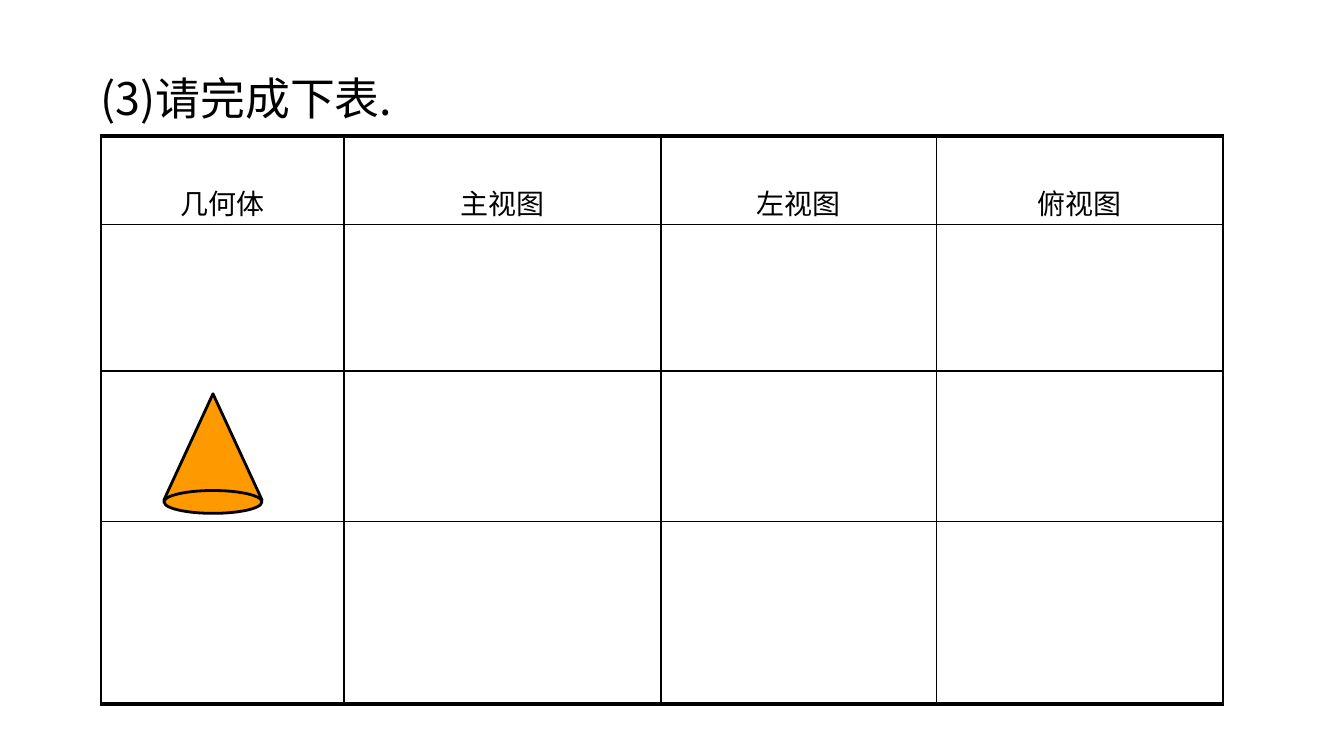
from lxml.etree import SubElement
from pptx import Presentation
from pptx.dml.color import RGBColor
from pptx.enum.shapes import MSO_SHAPE as Preset
from pptx.enum.text import MSO_ANCHOR as Anchor, PP_ALIGN as Align
from pptx.oxml.ns import qn
from pptx.util import Inches, Pt

BLACK, ORANGE = "000000", "FF9900"
CJK_FONT = "Noto Sans CJK SC"
TITLE = "(3)请完成下表."
HEADERS = ["几何体", "主视图", "左视图", "俯视图"]
COLUMNS = [1.81, 2.36, 2.05, 2.13]
ROWS = [0.66, 1.09, 1.12, 1.36]
TABLE_LEFT, TABLE_TOP = 0.75, 1.01
THIN, THICK = 1, 2.25
CONE = [
    (Preset.ISOSCELES_TRIANGLE, 2.93, 0.79),
    (Preset.OVAL, 3.65, 0.17),
]
CONE_LEFT, CONE_WIDTH = 1.22, 0.73


def color(value):
    return RGBColor.from_string(value)


def format_text(paragraph, size, font, spacing):
    paragraph.line_spacing = spacing
    for run in paragraph.runs:
        run.font.size = Pt(size)
        run.font.name = font
        run.font.color.rgb = color(BLACK)
        SubElement(run.font._element, qn("a:ea"), typeface=CJK_FONT)


def set_borders(cell, widths):
    properties = cell._tc.get_or_add_tcPr()
    for position, (side, width) in enumerate(widths.items()):
        line = SubElement(properties, qn(f"a:ln{side}"), w=str(Pt(width)))
        fill = SubElement(line, qn("a:solidFill"))
        SubElement(fill, qn("a:srgbClr"), val=BLACK)
        properties.insert(position, line)


presentation = Presentation()
presentation.slide_width = Inches(10)
presentation.slide_height = presentation.slide_width * 9 // 16
slide = presentation.slides.add_slide(presentation.slide_layouts[6])

title = slide.shapes.add_textbox(Inches(0.65), Inches(0.53), Inches(9.33), Inches(0.44))
frame = title.text_frame
frame.word_wrap = True
frame.vertical_anchor = Anchor.MIDDLE
frame.margin_top = frame.margin_bottom = 0
frame.text = TITLE
format_text(frame.paragraphs[0], 24, CJK_FONT, 0.9)

table = slide.shapes.add_table(
    len(ROWS), len(COLUMNS), Inches(TABLE_LEFT), Inches(TABLE_TOP),
    Inches(sum(COLUMNS)), Inches(sum(ROWS)),
).table
table.first_row = table.horz_banding = False
for column, width in zip(table.columns, COLUMNS):
    column.width = Inches(width)
for index, (row, height) in enumerate(zip(table.rows, ROWS)):
    row.height = Inches(height)
    top = THICK if index == 0 else THIN
    bottom = THICK if index == len(ROWS) - 1 else THIN
    for cell in row.cells:
        cell.fill.background()
        cell.margin_left = cell.margin_right = Inches(0.1)
        cell.margin_top = cell.margin_bottom = Inches(0.04)
        set_borders(cell, {"L": THIN, "R": THIN, "T": top, "B": bottom})
for cell, header in zip(table.rows[0].cells, HEADERS):
    cell.text = header
    paragraph = cell.text_frame.paragraphs[0]
    paragraph.alignment = Align.CENTER
    format_text(paragraph, 15, "Arial", 2.0)

cone = slide.shapes.add_group_shape()
for preset, top, height in CONE:
    shape = cone.shapes.add_shape(
        preset, Inches(CONE_LEFT), Inches(top), Inches(CONE_WIDTH), Inches(height)
    )
    shape.shadow.inherit = False
    shape.fill.solid()
    shape.fill.fore_color.rgb = color(ORANGE)
    shape.line.color.rgb = color(BLACK)
    shape.line.width = Pt(1.5)

presentation.save("out.pptx")
